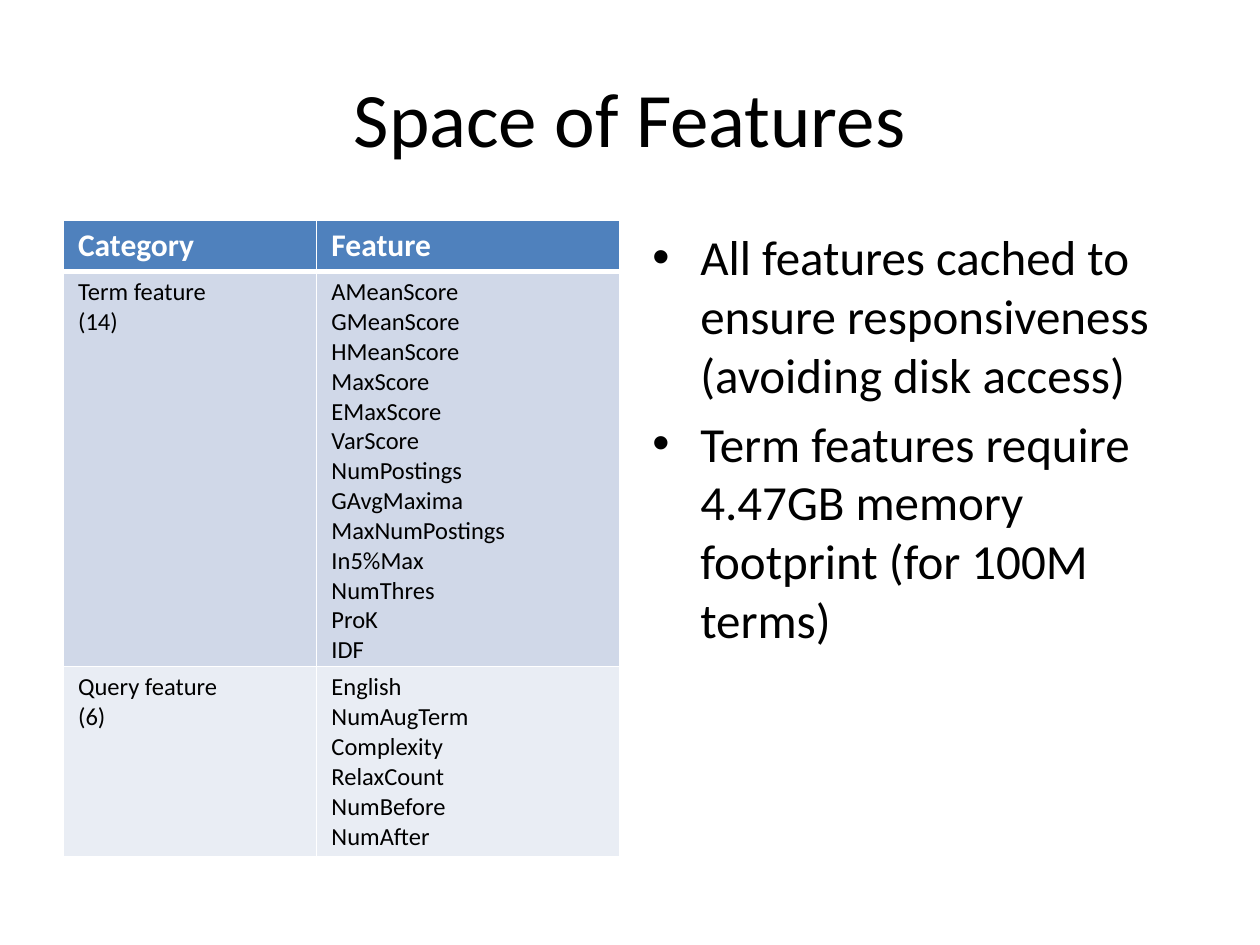
from dataclasses import dataclass

from lxml import etree
from pptx import Presentation
from pptx import util as u
from pptx.dml.color import RGBColor
from pptx.enum import text as t
from pptx.oxml.ns import qn


@dataclass(frozen=True)
class Theme:
    font: str = "Calibri"
    ink: str = "000000"
    paper: str = "FFFFFF"
    header: str = "4F81BD"
    bands: tuple = ("D0D8E8", "E9EDF4")
    title_size: int = 44
    bullet_size: int = 28
    header_size: int = 18
    cell_size: int = 14
    rule: int = 1
    header_rule: int = 3


THEME = Theme()
WIDTH, HEIGHT = 10, 7.5
MARGIN = 0.05 * WIDTH
GUTTER = 0.16
COLUMN = (WIDTH - 2 * MARGIN - GUTTER) / 2
BODY_TOP = 1.75

FEATURES = [
    (["Term feature", "(14)"],
     ["AMeanScore", "GMeanScore", "HMeanScore", "MaxScore", "EMaxScore",
      "VarScore", "NumPostings", "GAvgMaxima", "MaxNumPostings", "In5%Max",
      "NumThres", "ProK", "IDF"]),
    (["Query feature", "(6)"],
     ["English", "NumAugTerm", "Complexity", "RelaxCount", "NumBefore",
      "NumAfter"]),
]
POINTS = [
    "All features cached to ensure responsiveness (avoiding disk access)",
    "Term features require 4.47GB memory footprint (for 100M terms)",
]


def write(frame, lines, *, size, color=THEME.ink, bold=False,
          align=t.PP_ALIGN.LEFT, anchor=t.MSO_ANCHOR.TOP, bullet=None):
    """Fill a text frame with one paragraph per line."""
    frame.word_wrap = True
    frame.vertical_anchor = anchor
    for index, line in enumerate(lines):
        paragraph = frame.paragraphs[0] if index == 0 else frame.add_paragraph()
        paragraph.alignment = align
        run = paragraph.add_run()
        run.text = line
        run.font.name = THEME.font
        run.font.size = u.Pt(size)
        run.font.bold = bold
        run.font.color.rgb = RGBColor.from_string(color)
        if bullet:
            add_bullet(paragraph, bullet, size)


def add_bullet(paragraph, mark, size):
    paragraph.space_before = u.Pt(0.2 * size)
    properties = paragraph._p.get_or_add_pPr()
    indent = u.Inches(0.38)
    properties.set("marL", str(indent))
    properties.set("indent", str(-indent))
    etree.SubElement(properties, qn("a:buFont"), typeface="Arial")
    etree.SubElement(properties, qn("a:buChar"), char=mark)


def add_text(slide, box, lines, **style):
    frame = slide.shapes.add_textbox(*map(u.Inches, box)).text_frame
    write(frame, lines, **style)


def set_borders(cell, top, bottom):
    """Rule all four sides; the sides must precede the fill in the XML."""
    properties = cell._tc.get_or_add_tcPr()
    widths = {"L": THEME.rule, "R": THEME.rule, "T": top, "B": bottom}
    for index, (side, width) in enumerate(widths.items()):
        line = etree.Element(qn(f"a:ln{side}"), w=str(u.Pt(width)))
        fill = etree.SubElement(line, qn("a:solidFill"))
        etree.SubElement(fill, qn("a:srgbClr"), val=THEME.paper)
        properties.insert(index, line)


def fill_row(table, row, texts, fill, top, bottom, **style):
    for column, lines in enumerate(texts):
        cell = table.cell(row, column)
        cell.margin_left = cell.margin_right = u.Inches(0.12)
        cell.margin_top = cell.margin_bottom = u.Inches(0.05)
        cell.fill.solid()
        cell.fill.fore_color.rgb = RGBColor.from_string(fill)
        set_borders(cell, top, bottom)
        write(cell.text_frame, lines, **style)


def feature_table(slide, box):
    table = slide.shapes.add_table(
        len(FEATURES) + 1, 2, *map(u.Inches, box)).table
    for column, share in zip(table.columns, (0.455, 0.545)):
        column.width = u.Inches(share * box[2])
    for row, share in zip(table.rows, (0.08, 0.62, 0.3)):
        row.height = u.Inches(share * box[3])
    fill_row(table, 0, (["Category"], ["Feature"]), THEME.header,
             THEME.rule, THEME.header_rule,
             size=THEME.header_size, color=THEME.paper, bold=True)
    for row, (texts, band) in enumerate(zip(FEATURES, THEME.bands), start=1):
        top = THEME.header_rule if row == 1 else THEME.rule
        fill_row(table, row, texts, band, top, THEME.rule,
                 size=THEME.cell_size)


def features_slide(deck):
    slide = deck.slides.add_slide(deck.slide_layouts[6])
    add_text(slide, (MARGIN, 0.04 * HEIGHT, WIDTH - 2 * MARGIN, 1.25),
             ["Space of Features"], size=THEME.title_size,
             align=t.PP_ALIGN.CENTER, anchor=t.MSO_ANCHOR.MIDDLE)
    feature_table(slide, (MARGIN, BODY_TOP, COLUMN, 5.04))
    add_text(slide, (MARGIN + COLUMN + GUTTER, BODY_TOP, COLUMN, 4.95),
             POINTS, size=THEME.bullet_size, bullet="•")


def main():
    deck = Presentation()
    deck.slide_width, deck.slide_height = u.Inches(WIDTH), u.Inches(HEIGHT)
    features_slide(deck)
    deck.save("out.pptx")


if __name__ == "__main__":
    main()
